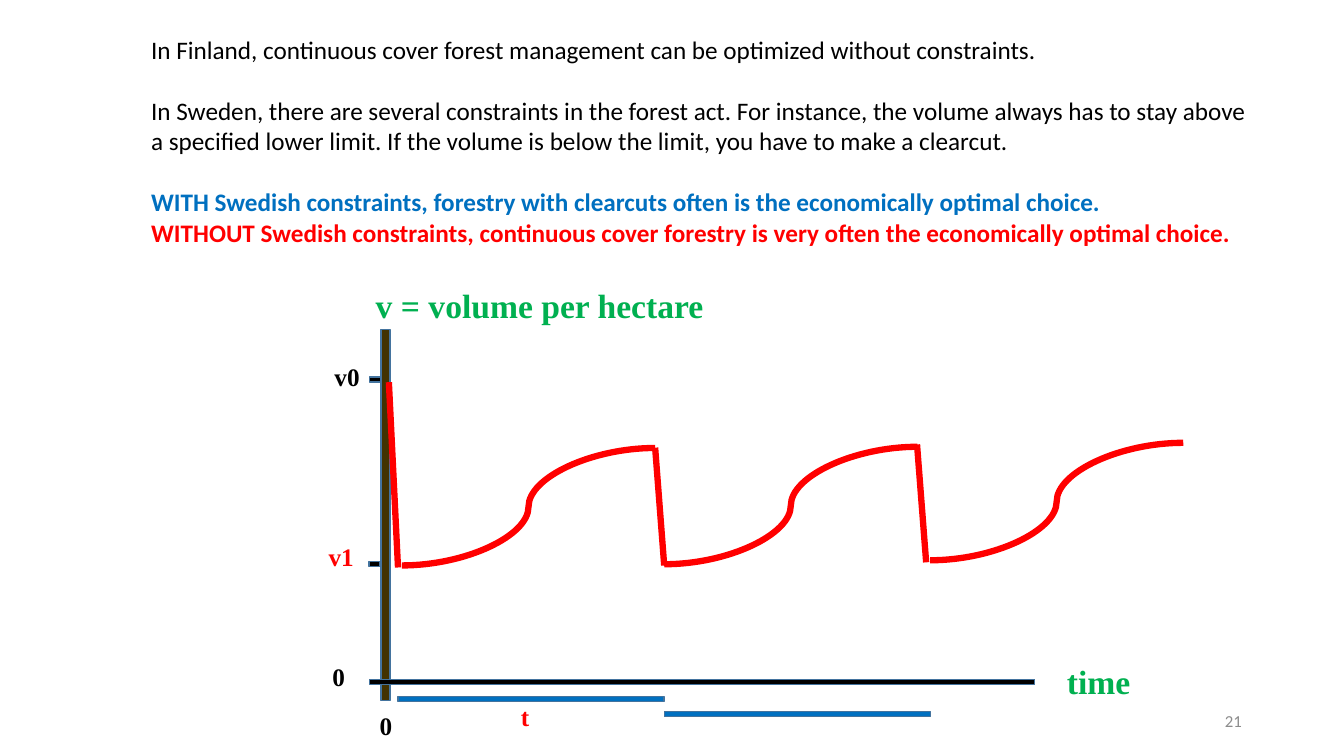
from lxml import etree
from pptx import Presentation
from pptx.dml.color import RGBColor
from pptx.enum.shapes import MSO_CONNECTOR, MSO_SHAPE
from pptx.enum.text import MSO_ANCHOR, PP_ALIGN
from pptx.oxml.ns import qn
from pptx.util import Cm, Pt

STRAIGHT, CURVE = MSO_CONNECTOR.STRAIGHT, MSO_CONNECTOR.CURVE
RECTANGLE = MSO_SHAPE.RECTANGLE
TOP, MIDDLE = MSO_ANCHOR.TOP, MSO_ANCHOR.MIDDLE
LEFT, RIGHT = PP_ALIGN.LEFT, PP_ALIGN.RIGHT

BLACK = RGBColor(0x00, 0x00, 0x00)
RED = RGBColor(0xFF, 0x00, 0x00)
GREEN = RGBColor(0x00, 0xB0, 0x50)
BLUE = RGBColor(0x00, 0x70, 0xC0)
BROWN = RGBColor(0x42, 0x32, 0x00)
EDGE = RGBColor(0x43, 0x73, 0x9E)
GRAY = RGBColor(0x8C, 0x8C, 0x8C)


class ForestPage:
    """Draws text, bars and growth lines on one slide, in centimetres."""

    body_font = "Calibri"
    label_font = "Times New Roman"
    thin = 0.13

    def __init__(self, deck):
        self.page = deck.slides.add_slide(deck.slide_layouts[6])

    def text_box(self, left, top, width, height, anchor=TOP):
        box = self.page.shapes.add_textbox(Cm(left), Cm(top), Cm(width), Cm(height))
        box.text_frame.word_wrap = True
        box.text_frame.vertical_anchor = anchor
        return box.text_frame

    def span(self, para, text, font, size, color, bold):
        span = para.add_run()
        span.text = text
        span.font.name = font
        span.font.size = Pt(size)
        span.font.color.rgb = color
        span.font.bold = bold

    def label(self, text, left, top, color=BLACK, size=18, width=1.3, height=1.02):
        para = self.text_box(left, top, width, height).paragraphs[0]
        self.span(para, text, self.label_font, size, color, True)

    def body(self, lines, left, top, width, height):
        frame = self.text_box(left, top, width, height)
        for index, (text, color, bold, gap) in enumerate(lines):
            para = frame.add_paragraph() if index else frame.paragraphs[0]
            para.space_before = Pt(gap)
            self.span(para, text, self.body_font, 18, color, bold)

    def page_number(self, text, left, top, width, height):
        para = self.text_box(left, top, width, height, MIDDLE).paragraphs[0]
        para.alignment = RIGHT
        self.span(para, text, self.body_font, 12, GRAY, False)

    def bar(self, left, top, width, height, color):
        bar = self.page.shapes.add_shape(RECTANGLE, Cm(left), Cm(top), Cm(width), Cm(height))
        bar.shadow.inherit = False
        bar.fill.solid()
        bar.fill.fore_color.rgb = color
        bar.line.color.rgb = EDGE
        bar.line.width = Pt(1)

    def volume_line(self, kind, start, end):
        line = self.page.shapes.add_connector(kind, *map(Cm, start + end))
        line.line.color.rgb = RED
        line.line.width = Pt(4.5)
        etree.SubElement(line._element.spPr, qn("a:effectLst"))


def main():
    deck = Presentation()
    deck.slide_width, deck.slide_height = Cm(33.87), Cm(19.05)
    forest = ForestPage(deck)

    forest.page_number("21", 23.93, 17.65, 7.62, 1.02)
    forest.bar(9.6, 8.31, 0.23, 9.35, BROWN)
    forest.bar(9.32, 17.12, 16.76, forest.thin, BLACK)
    for left, top in ((9.32, 9.5), (9.3, 14.15)):
        forest.bar(left, top, 0.28, forest.thin, BLACK)

    period = 6.71
    for index, top in enumerate((17.55, 17.93)):
        forest.bar(10.03 + index * period, top, period, forest.thin, BLUE)

    harvests = (
        ((9.8, 9.63), (10.03, 14.3)),
        ((16.51, 11.28), (16.74, 14.25)),
        ((23.11, 11.2), (23.34, 14.17)),
    )
    for start, end in harvests:
        forest.volume_line(STRAIGHT, start, end)
    for left, bottom in ((10.13, 14.25), (16.74, 14.22), (23.44, 14.12)):
        forest.volume_line(CURVE, (left, bottom), (left + 6.38, bottom - 2.96))

    forest.label("v = volume per hectare", 9.22, 7.06, GREEN, 24, 9.25, 1.27)
    forest.label("time", 26.64, 16.54, GREEN, 24, 4.83, 1.27)
    forest.label("v0", 8.18, 8.99)
    forest.label("v1", 8.03, 13.51, RED)
    forest.label("0", 8.13, 16.54)
    forest.label("0", 9.32, 17.78)
    forest.label("t", 12.88, 17.55, RED)

    gap = 22
    forest.body(
        (
            ("In Finland, continuous cover forest management can be optimized "
             "without constraints.", BLACK, False, 0),
            ("In Sweden, there are several constraints in the forest act. For instance, "
             "the volume always has to stay above", BLACK, False, gap),
            ("a specified lower limit. If the volume is below the limit, "
             "you have to make a clearcut.", BLACK, False, 0),
            ("WITH Swedish constraints, forestry with clearcuts often is the "
             "economically optimal choice.", BLUE, True, gap),
            ("WITHOUT Swedish constraints, continuous cover forestry is very often the "
             "economically optimal choice.", RED, True, 0),
        ),
        3.56, 0.74, 28.58, 6.4,
    )
    deck.save("out.pptx")


if __name__ == "__main__":
    main()
